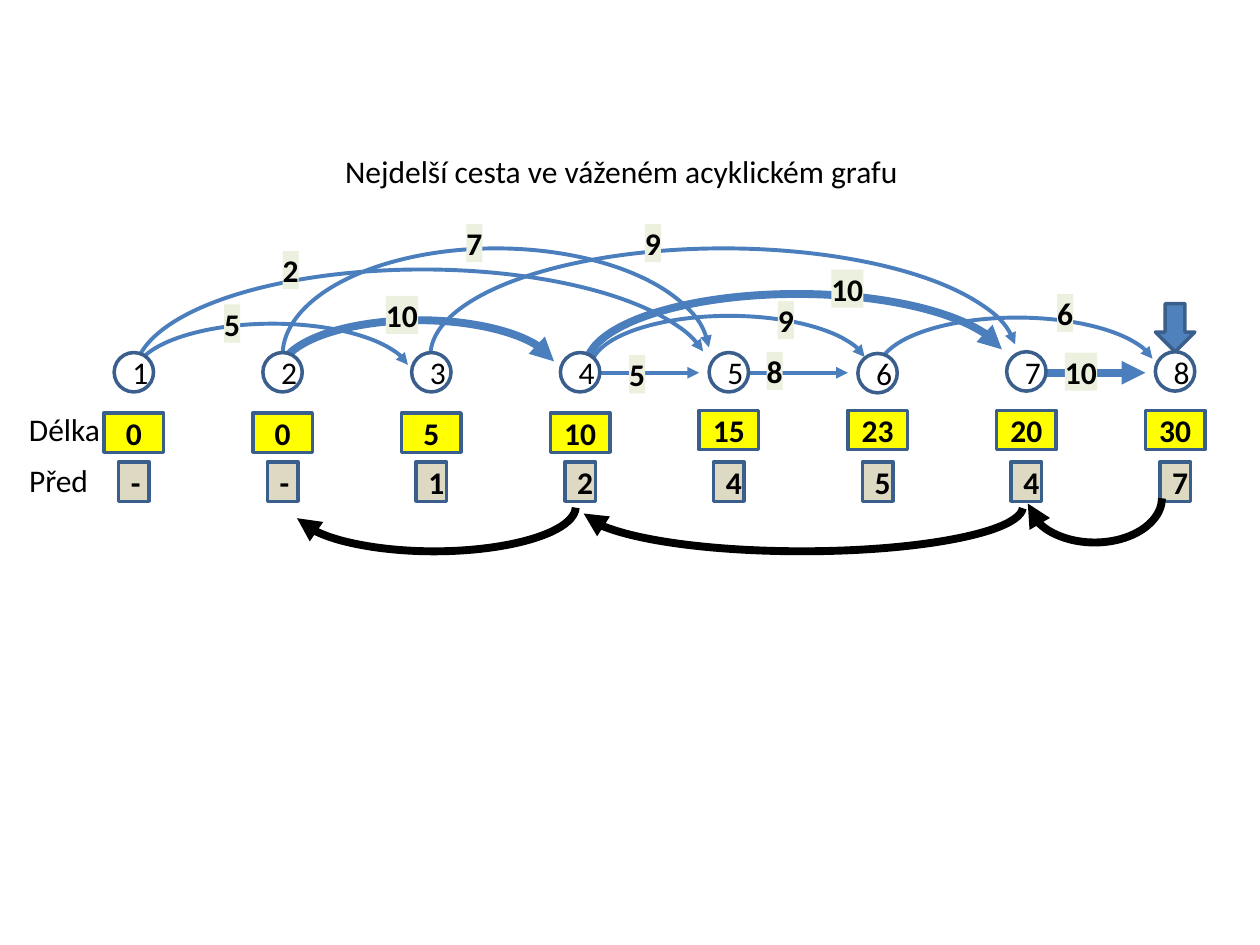
import pptx
import pptx.dml.color
import pptx.enum.shapes
import pptx.enum.text
import pptx.oxml.ns
import pptx.util
from lxml import etree

Pt = pptx.util.Pt
RGBColor = pptx.dml.color.RGBColor
SHAPE = pptx.enum.shapes.MSO_SHAPE
ALIGN = pptx.enum.text.PP_ALIGN
ANCHOR = pptx.enum.text.MSO_ANCHOR
AUTO_SIZE = pptx.enum.text.MSO_AUTO_SIZE
qn = pptx.oxml.ns.qn

BLACK = RGBColor(0x00, 0x00, 0x00)
WHITE = RGBColor(0xFF, 0xFF, 0xFF)
EDGE_BLUE = RGBColor(0x4B, 0x7E, 0xBC)
OUTLINE_BLUE = RGBColor(0x3A, 0x5F, 0x8C)
ARROW_BLUE = RGBColor(0x4F, 0x81, 0xBD)
YELLOW = RGBColor(0xFF, 0xFF, 0x00)
TAN = RGBColor(0xDD, 0xD9, 0xC3)
PALE_GREEN = RGBColor(0xEB, 0xF1, 0xDE)

THIN, THICK = 2.25, 4.5
NODE_SIZE = 22.5
FIRST_CENTER, NODE_PITCH = 76.5, 85
LINE_Y = 213
ARC_SCALE = 0.6  # one degree in the units of the arc's adjustments
LOW_END, HIGH_END = 355.2, 357.8

NODE_TOPS = [201.5] * 5 + [202, 201, 201]
LENGTHS = ["0", "0", "5", "10", "15", "23", "20", "30"]
LENGTH_TOPS = [236] * 4 + [234.5] * 4
PREDECESSORS = ["-", "-", "1", "2", "4", "5", "4", "7"]

# left, top, width, height, end angle, line width
EDGE_ARCS = [
    (76.5, 185, 158.5, 60, LOW_END, THIN),
    (77, 154, 329, 120.5, LOW_END, THIN),
    (161.5, 142, 244, 122.5, HIGH_END, THIN),
    (502, 181.5, 158.5, 60, LOW_END, THIN),
    (337.5, 180.5, 158.5, 60, LOW_END, THIN),
    (246, 142, 335, 122.5, HIGH_END, THIN),
    (335, 168, 241, 83, LOW_END, THICK),
    (160, 183, 158.5, 60, LOW_END, THICK),
]
BACK_ARCS = [
    (587, 259, 77, 51, LOW_END, THICK),
    (332, 264, 252.5, 51, 358.2, THICK),
    (167, 264, 162, 51, LOW_END, THICK),
]
# index of the start node, line width
STRAIGHT_EDGES = [(3, THIN), (4, THIN), (6, THICK)]
# text, left, top
WEIGHTS = [
    ("2", 161.5, 143.5), ("10", 220.5, 169), ("7", 266.5, 128),
    ("9", 368.5, 128), ("6", 604, 168), ("10", 475, 154),
    ("9", 444.5, 172), ("8", 438, 201), ("5", 359.5, 203),
    ("10", 608.5, 201.5), ("5", 128, 174),
]


def node_center(index):
    return FIRST_CENTER + NODE_PITCH * index


def write(tf, text, bold=False, align=ALIGN.LEFT):
    p = tf.paragraphs[0]
    p.alignment = align
    r = p.add_run()
    r.text = text
    r.font.name = "Calibri"
    r.font.size = Pt(18)
    r.font.bold = bold
    r.font.color.rgb = BLACK


def fit_to_text(tf):
    tf.word_wrap = False
    tf.auto_size = AUTO_SIZE.SHAPE_TO_FIT_TEXT


def style_line(line, color, width, arrow=False):
    line.color.rgb = color
    line.width = Pt(width)
    if arrow:
        etree.SubElement(line._get_or_add_ln(), qn("a:tailEnd"), type="triangle")


def add_title(s, text):
    sp = s.shapes.title
    sp.left, sp.top, sp.width, sp.height = Pt(190), Pt(83), Pt(334), Pt(29)
    tf = sp.text_frame
    tf.vertical_anchor = ANCHOR.TOP
    fit_to_text(tf)
    write(tf, text)


def add_label(s, text, left, top, width):
    sp = s.shapes.add_textbox(Pt(left), Pt(top), Pt(width), Pt(29))
    fit_to_text(sp.text_frame)
    write(sp.text_frame, text)


def add_weight(s, text, left, top):
    sp = s.shapes.add_textbox(Pt(left), Pt(top), Pt(9.2 * len(text)), Pt(21.8))
    sp.fill.solid()
    sp.fill.fore_color.rgb = PALE_GREEN
    tf = sp.text_frame
    tf.margin_left = tf.margin_right = tf.margin_top = tf.margin_bottom = 0
    tf.vertical_anchor = ANCHOR.MIDDLE
    fit_to_text(tf)
    write(tf, text, bold=True)


def add_box(s, kind, center, top, width, height, fill, text="", bold=False):
    sp = s.shapes.add_shape(
        kind, Pt(center - width / 2), Pt(top), Pt(width), Pt(height))
    sp.shadow.inherit = False
    sp.fill.solid()
    sp.fill.fore_color.rgb = fill
    style_line(sp.line, OUTLINE_BLUE, 2)
    if text:
        sp.text_frame.vertical_anchor = ANCHOR.MIDDLE
        write(sp.text_frame, text, bold, ALIGN.CENTER)


def add_arc(s, left, top, width, height, end, weight, color, rotation=0):
    """Draw an arrowed arc clockwise from the left side to the end angle."""
    sp = s.shapes.add_shape(SHAPE.ARC, Pt(left), Pt(top), Pt(width), Pt(height))
    sp.adjustments[0] = 180.4 * ARC_SCALE
    sp.adjustments[1] = end * ARC_SCALE
    sp.rotation = rotation
    sp.shadow.inherit = False
    sp.fill.background()
    style_line(sp.line, color, weight, arrow=True)


def add_straight_edge(s, start_node, weight):
    x = node_center(start_node) + 11
    cx = s.shapes.add_connector(
        pptx.enum.shapes.MSO_CONNECTOR.STRAIGHT,
        Pt(x), Pt(LINE_Y), Pt(x + 57), Pt(LINE_Y))
    style_line(cx.line, EDGE_BLUE, weight, arrow=True)
    etree.SubElement(cx._element.spPr, qn("a:effectLst"))


def main():
    prs = pptx.Presentation()
    prs.slide_width, prs.slide_height = Pt(720), Pt(540)
    s = prs.slides.add_slide(prs.slide_layouts[5])

    add_title(s, "Nejdelší cesta ve váženém acyklickém grafu")
    for arc in EDGE_ARCS:
        add_arc(s, *arc, EDGE_BLUE)
    for edge in STRAIGHT_EDGES:
        add_straight_edge(s, *edge)
    for i, top in enumerate(NODE_TOPS):
        add_box(s, SHAPE.OVAL, node_center(i), top, NODE_SIZE, NODE_SIZE,
                WHITE, str(i + 1))
    for weight in WEIGHTS:
        add_weight(s, *weight)
    for i, (length, top) in enumerate(zip(LENGTHS, LENGTH_TOPS)):
        add_box(s, SHAPE.RECTANGLE, node_center(i), top, 34, NODE_SIZE,
                YELLOW, length, bold=True)
    for i, predecessor in enumerate(PREDECESSORS):
        add_box(s, SHAPE.RECTANGLE, node_center(i), 264, 17.5, NODE_SIZE,
                TAN, predecessor, bold=True)
    add_label(s, "Před", 9.5, 260, 49)
    add_label(s, "Délka", 9.5, 231, 55.5)
    add_box(s, SHAPE.DOWN_ARROW, node_center(7), 173.5, NODE_SIZE, 27.5, ARROW_BLUE)
    for arc in BACK_ARCS:
        add_arc(s, *arc, BLACK, rotation=180)

    prs.save("out.pptx")


if __name__ == "__main__":
    main()
